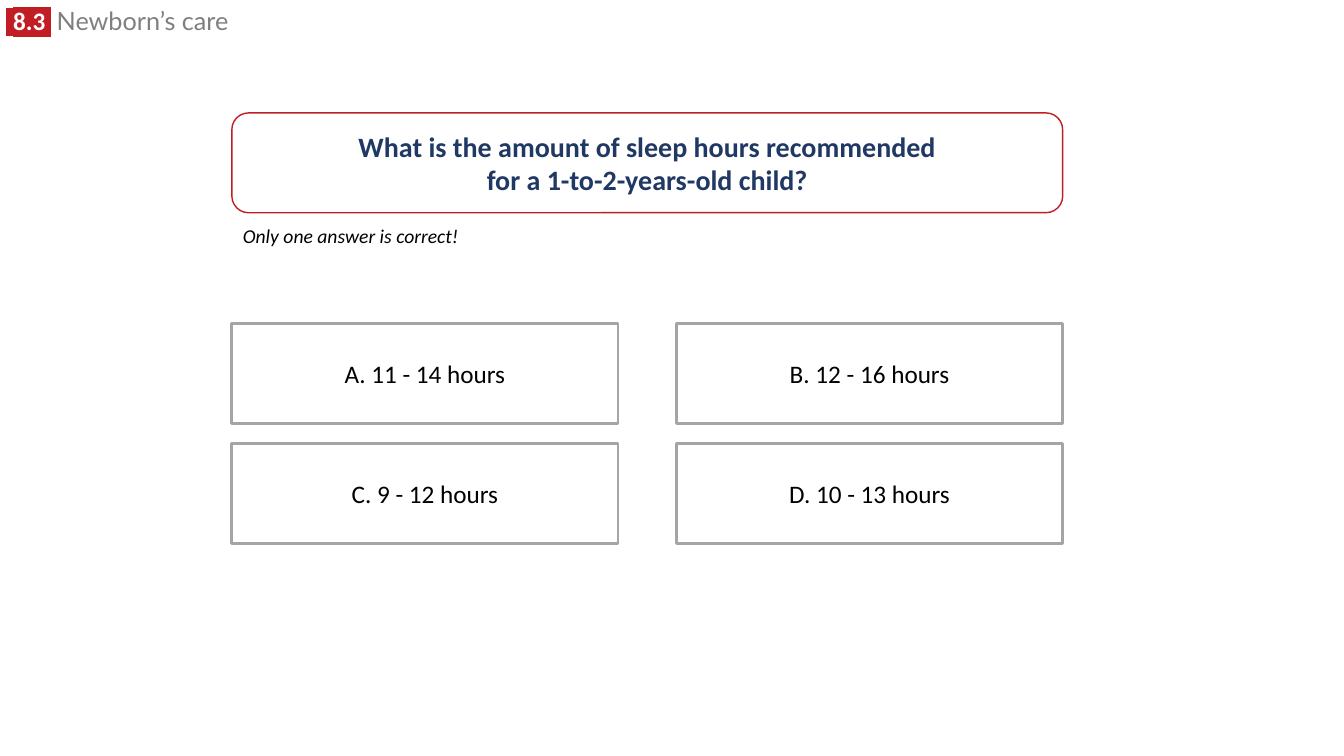
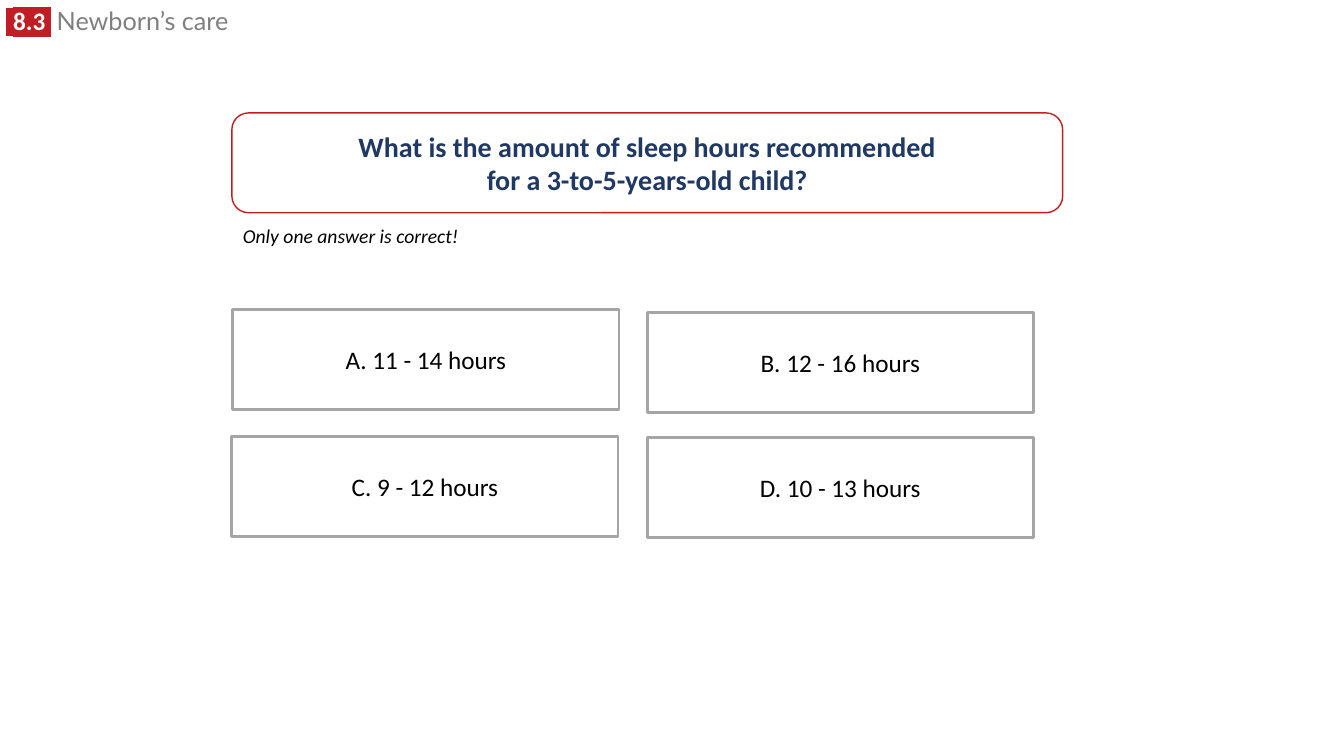
from lxml.etree import SubElement
from pptx import Presentation
from pptx.dml.color import RGBColor
from pptx.enum.shapes import MSO_SHAPE
from pptx.enum.text import MSO_ANCHOR, MSO_AUTO_SIZE, PP_ALIGN
from pptx.oxml.ns import qn
from pptx.util import Inches, Pt

RED, NAVY, GREY, BORDER = "C01E24", "203864", "7F7F7F", "A5A5A5"
WHITE, BLACK = "FFFFFF", "000000"
HEADER_BOX = (-0.04, 0.06, 2.76, 0.34)
QUESTION_BOX = (2.3, 1.12, 8.24, 0.99)
HINT_BOX = (2.31, 2.17, 2.36, 0.34)
ANSWER_SIZE = (3.83, 0.99)
HEADER_RUNS = [
    (" ", "Arial", WHITE, RED),
    ("8.3 ", "Calibri", WHITE, RED),
    (" ", "Calibri", GREY, None),
    ("Newborn’s care", "Lato", GREY, None),
]
ANSWERS = ["A. 11 - 14 hours", "B. 12 - 16 hours", "C. 9 - 12 hours", "D. 10 - 13 hours"]
QUIZZES = [
    ("1-to-2", [(2.3, 3.21), (6.71, 3.21), (2.3, 4.4), (6.71, 4.4)]),
    ("3-to-5", [(2.31, 3.07), (6.42, 3.1), (2.3, 4.33), (6.42, 4.34)]),
]


def color(value):
    return RGBColor.from_string(value)


def inches(box):
    return [Inches(length) for length in box]


def style_font(font, size, value, name="Calibri", bold=False, italic=False):
    font.name, font.size = name, Pt(size)
    font.bold, font.italic = bold, italic
    font.color.rgb = color(value)


def highlight(run, value):
    properties = run.font._element if hasattr(run.font, "_element") else run._r.get_or_add_rPr()
    mark = SubElement(properties, qn("a:highlight"))
    SubElement(mark, qn("a:srgbClr"), val=value)
    properties.find(qn("a:solidFill")).addnext(mark)


def add_header(slide, box):
    title = slide.shapes.title
    title.left, title.top, title.width, title.height = inches(box)
    frame = title.text_frame
    frame.word_wrap = True
    frame.auto_size = MSO_AUTO_SIZE.NONE
    frame.vertical_anchor = MSO_ANCHOR.TOP
    paragraph = frame.paragraphs[0]
    paragraph.alignment = PP_ALIGN.LEFT
    paragraph.line_spacing = 0.8
    for text, name, value, background in HEADER_RUNS:
        run = paragraph.add_run()
        run.text = text
        style_font(run.font, 18, value, name, bold=background is not None)
        if background:
            highlight(run, background)


def add_box(slide, box, kind, lines, border, border_width, size, value, bold=False):
    shape = slide.shapes.add_shape(kind, *inches(box))
    shape.shadow.inherit = False
    shape.fill.solid()
    shape.fill.fore_color.rgb = color(WHITE)
    shape.line.color.rgb = color(border)
    shape.line.width = Pt(border_width)
    frame = shape.text_frame
    frame.word_wrap = True
    frame.vertical_anchor = MSO_ANCHOR.MIDDLE
    frame.text = "\n".join(lines)
    for paragraph in frame.paragraphs:
        paragraph.alignment = PP_ALIGN.CENTER
        style_font(paragraph.font, size, value, bold=bold)


def add_hint(slide, box):
    frame = slide.shapes.add_textbox(*inches(box)).text_frame
    frame.word_wrap = True
    paragraph = frame.paragraphs[0]
    paragraph.text = "Only one answer is correct!"
    style_font(paragraph.font, 14, BLACK, italic=True)


def add_quiz_slide(presentation, age, positions):
    slide = presentation.slides.add_slide(presentation.slide_layouts.get_by_name("Title Only"))
    add_header(slide, HEADER_BOX)
    question = ["What is the amount of sleep hours recommended", f"for a {age}-years-old child?"]
    add_box(slide, QUESTION_BOX, MSO_SHAPE.ROUNDED_RECTANGLE, question, RED, 1, 20, NAVY, bold=True)
    add_hint(slide, HINT_BOX)
    for answer, position in zip(ANSWERS, positions):
        add_box(slide, position + ANSWER_SIZE, MSO_SHAPE.RECTANGLE, [answer], BORDER, 2, 18, BLACK)


def main():
    presentation = Presentation()
    presentation.slide_width, presentation.slide_height = Inches(13.33), Inches(7.5)
    for age, positions in QUIZZES:
        add_quiz_slide(presentation, age, positions)
    presentation.save("out.pptx")


if __name__ == "__main__":
    main()
